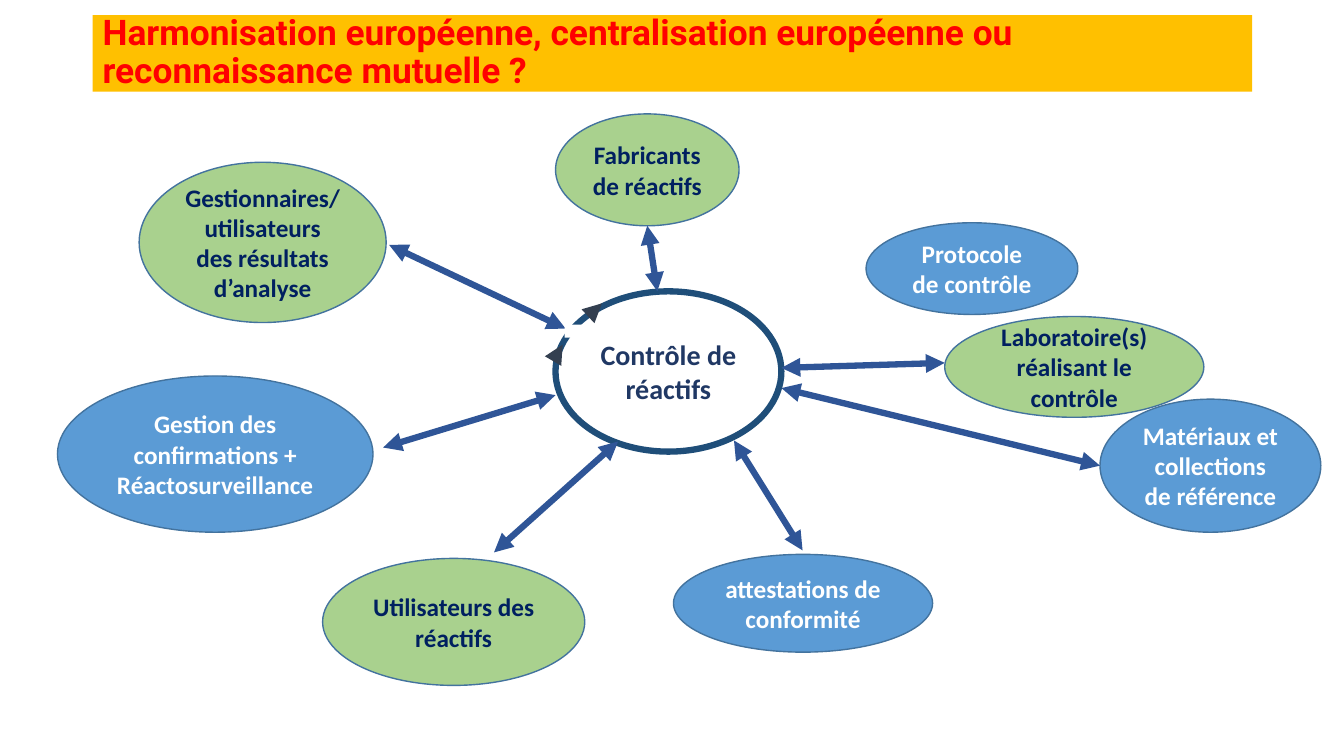
from lxml.etree import SubElement
from pptx import Presentation
from pptx.dml.color import RGBColor
from pptx.enum.shapes import MSO_CONNECTOR as Connector, MSO_SHAPE as Shape
from pptx.enum.text import MSO_ANCHOR as Anchor, PP_ALIGN as Align
from pptx.oxml.ns import qn
from pptx.util import Emu, Pt

PX = 9144  # 100 px to the inch
GREEN, BLUE, WHITE = "A9D18E", "5B9BD5", "FFFFFF"
NAVY, EDGE, ARROW, DARK = "002060", "43739E", "2F5597", "333F50"


def px(*lengths):
    return [Emu(length * PX) for length in lengths]


def color(value):
    return RGBColor.from_string(value)


def write(shape, text, font="Calibri", size=18, ink=NAVY, align=Align.CENTER, spacing=1.0):
    frame = shape.text_frame
    frame.word_wrap = True
    frame.vertical_anchor = Anchor.MIDDLE
    para = frame.paragraphs[0]
    para.text = text
    para.alignment = align
    para.line_spacing = spacing
    for span in para.runs:
        span.font.name = font
        span.font.size = Pt(size)
        span.font.bold = True
        span.font.color.rgb = color(ink)


class Diagram:
    def __init__(self, slide):
        self.slide = slide

    def box(self, kind, place, fill=None, line=None, width=1):
        shape = self.slide.shapes.add_shape(kind, *px(*place))
        shape.shadow.inherit = False
        if fill:
            shape.fill.solid()
            shape.fill.fore_color.rgb = color(fill)
        else:
            shape.fill.background()
        if line:
            shape.line.color.rgb = color(line)
            shape.line.width = Pt(width)
        else:
            shape.line.fill.background()
        return shape

    def bubble(self, text, place, fill):
        shape = self.box(Shape.OVAL, place, fill, EDGE)
        write(shape, text, ink=NAVY if fill == GREEN else WHITE)

    def arrow(self, ends, line=ARROW, heads=("headEnd", "tailEnd")):
        link = self.slide.shapes.add_connector(Connector.STRAIGHT, *px(*ends))
        link.line.color.rgb = color(line)
        link.line.width = Pt(4.5)
        for head in heads:
            SubElement(link.line._get_or_add_ln(), qn("a:" + head), type="triangle")
        SubElement(link._element.spPr, qn("a:effectLst"))


def main():
    deck = Presentation()
    deck.slide_width, deck.slide_height = px(1333, 750)
    page = Diagram(deck.slides.add_slide(deck.slide_layouts[6]))

    # Title band
    title = page.box(Shape.RECTANGLE, (92, 15, 1150, 76), "FFC000")
    write(title, "Harmonisation européenne, centralisation européenne ou reconnaissance mutuelle ?",
          font="Roboto", size=25.2, ink="FF0000", align=Align.LEFT, spacing=0.9)

    # Central topic
    hub = page.box(Shape.OVAL, (551, 289, 224, 159), line="1F4E79", width=4.5)
    write(hub, "Contrôle de réactifs", size=20, ink="203864")

    # Surrounding actors (green) and tools (blue)
    for text, place, fill in [
        ("Laboratoire(s) réalisant le contrôle", (937, 314, 257, 100), GREEN),
        ("Matériaux et collections de référence", (1091, 396, 219, 132), BLUE),
        ("Gestionnaires/utilisateurs des résultats d’analyse", (138, 161, 245, 159), GREEN),
        ("attestations de conformité", (668, 550, 257, 97), BLUE),
        ("Gestion des confirmations + Réactosurveillance", (57, 373, 313, 155), BLUE),
        ("Fabricants\vde réactifs", (551, 113, 182, 111), GREEN),
        ("Protocole de contrôle", (859, 221, 210, 91), BLUE),
        ("Utilisateurs des réactifs", (320, 554, 260, 126), GREEN),
    ]:
        page.bubble(text, place, fill)

    # Two-way exchanges with the hub
    for ends in [
        (386, 243, 561, 326),
        (380, 444, 551, 392),
        (775, 365, 937, 360),
        (728, 437, 796, 546),
        (652, 289, 642, 224),
        (775, 385, 1091, 462),
        (613, 438, 490, 548),
    ]:
        page.arrow(ends)

    # Gap in the hub ring, with arrowheads showing its direction
    page.box(Shape.RECTANGLE, (560, 322, 19, 13), WHITE)
    for ends in [(584, 313, 597, 301), (551, 354, 558, 342)]:
        page.arrow(ends, DARK, ("tailEnd",))

    deck.save("out.pptx")


if __name__ == "__main__":
    main()
